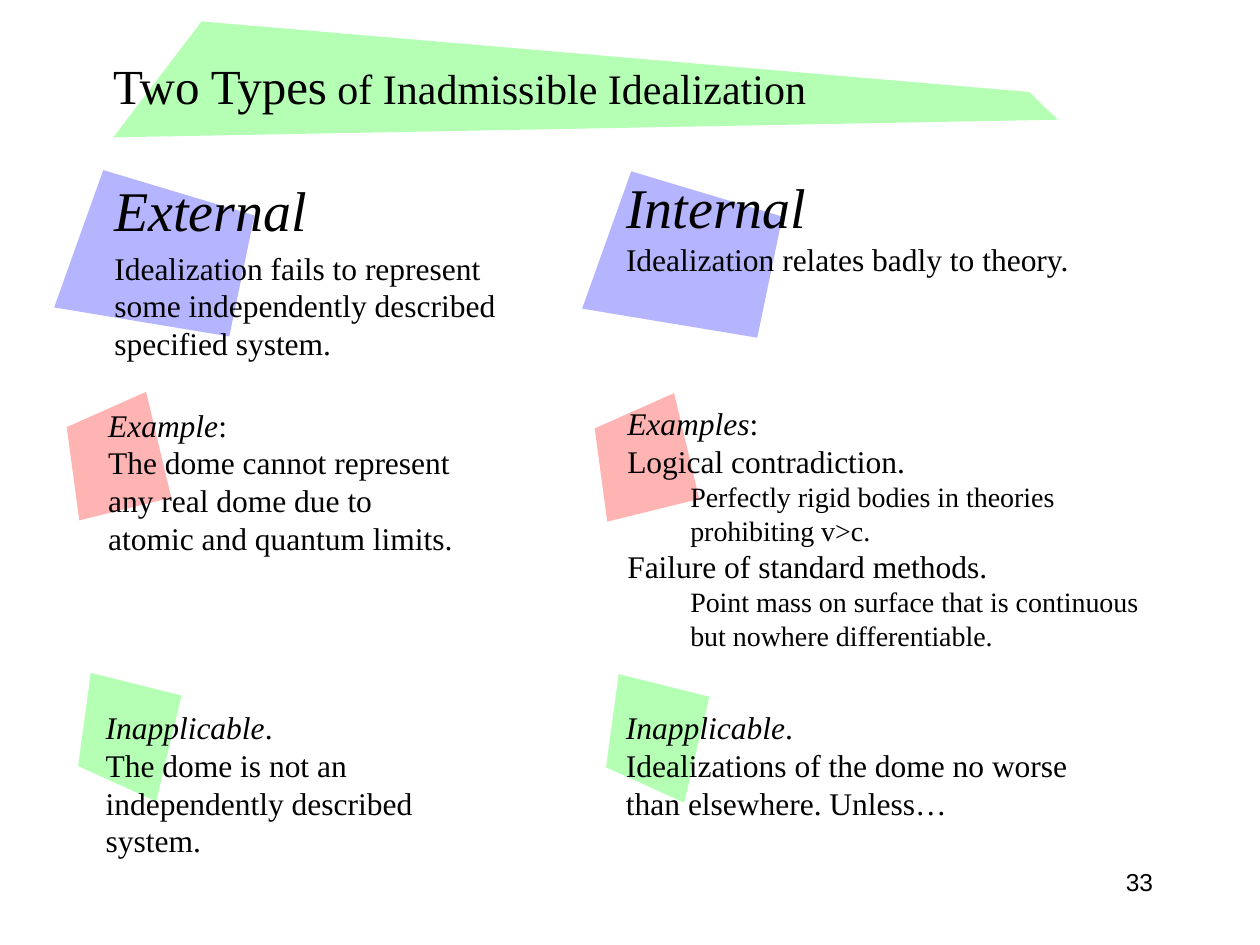
"""Build the slide comparing external and internal inadmissible idealization."""
from pptx import Presentation
from pptx.dml.color import RGBColor
from pptx.enum.text import MSO_ANCHOR, PP_ALIGN
from pptx.util import Inches, Pt

LEFT, RIGHT = PP_ALIGN.LEFT, PP_ALIGN.RIGHT
TOP, MIDDLE = MSO_ANCHOR.TOP, MSO_ANCHOR.MIDDLE
SERIF, SANS = "Times New Roman", "Arial"
BLACK, BLUE, RED, GREEN = "000000", "B4B4FF", "FFB4B4", "B4FFB4"
COLUMN_SHIFTS = [(0, 0), (4.19, 0.01)]

BANNER = [(1.6, 0.17), (8.17, 0.73), (8.28, 0.84), (8.4, 0.95), (0.9, 1.09)]
PATCHES = [
    (BLUE, [(0.82, 1.35), (2.02, 1.71), (1.82, 2.67), (0.43, 2.44)]),
    (RED, [(1.16, 3.11), (0.53, 3.39), (0.63, 4.13), (1.36, 3.95)]),
    (GREEN, [(1.24, 6.36), (0.62, 6.08), (0.72, 5.34), (1.44, 5.52)]),
]

TITLE = [[("Two Types", 28, False), (" of Inadmissible Idealization", 24, False)]]
EXTERNAL = [
    [("External", 32, True)],
    [("Idealization fails to represent some independently described specified system.", 18, False)],
]
INTERNAL = [
    [("Internal", 32, True)],
    [("Idealization relates badly to theory.", 18, False)],
]
DOME_EXAMPLE = [
    [("Example", 18, True), (":", 18, False)],
    [("The dome cannot represent any real dome due to atomic and quantum limits.", 18, False)],
]
THEORY_EXAMPLES = [
    [("Examples", 18, True), (":", 18, False)],
    [("Logical contradiction.\n", 18, False),
     ("Perfectly rigid bodies in theories prohibiting v>c.", 16, False)],
    [("Failure of standard methods.\n", 18, False),
     ("Point mass on surface that is continuous but nowhere differentiable.", 16, False)],
]
DOME_VERDICT = [
    [("Inapplicable", 18, True), (".", 18, False)],
    [("The dome is not an independently described system.", 18, False)],
]
THEORY_VERDICT = [
    [("Inapplicable", 18, True), (".", 18, False)],
    [("Idealizations of the dome no worse than elsewhere. Unless…", 18, False)],
]
TEXTS = [
    ((0.8, 0.21, 7.75, 0.92), TITLE, {"anchor": MIDDLE}),
    ((0.81, 1.34, 3.26, 1.82), EXTERNAL, {"space": 0.2}),
    ((4.87, 1.32, 3.99, 0.94), INTERNAL, {}),
    ((0.76, 3.17, 2.99, 1.3), DOME_EXAMPLE, {}),
    ((4.88, 3.16, 4.29, 2.07), THEORY_EXAMPLES, {"hanging": 0.5}),
    ((0.74, 5.57, 2.82, 1.3), DOME_VERDICT, {}),
    ((4.87, 5.57, 4.13, 1), THEORY_VERDICT, {}),
    ((7.17, 6.83, 2.08, 0.5), [[("33", 14, False)]], {"align": RIGHT, "font": SANS}),
]


def rgb(value):
    return RGBColor.from_string(value)


def add_patch(s, points, color, dx=0, dy=0):
    moved = [(Inches(x + dx), Inches(y + dy)) for x, y in points]
    builder = s.shapes.build_freeform(*moved[0])
    builder.add_line_segments(moved[1:], close=True)
    sp = builder.convert_to_shape()
    sp.shadow.inherit = False
    sp.fill.solid()
    sp.fill.fore_color.rgb = rgb(color)
    sp.line.fill.background()


def add_text(s, box, paragraphs, anchor=TOP, align=LEFT, font=SERIF, space=0, hanging=0):
    tf = s.shapes.add_textbox(*map(Inches, box)).text_frame
    tf.word_wrap = True
    tf.vertical_anchor = anchor
    for i, runs in enumerate(paragraphs):
        p = tf.add_paragraph() if i else tf.paragraphs[0]
        p.alignment = align
        if space:
            p.space_before = Pt(space * runs[0][1])
        if hanging:
            pPr = p._p.get_or_add_pPr()
            pPr.set("marL", str(Inches(hanging)))
            pPr.set("indent", str(-Inches(hanging)))
        for text, size, italic in runs:
            r = p.add_run()
            r.text = text.rstrip("\n")
            r.font.name = font
            r.font.size = Pt(size)
            r.font.italic = italic
            r.font.color.rgb = rgb(BLACK)
            if text.endswith("\n"):
                p.add_line_break()


def main():
    prs = Presentation()
    prs.slide_width, prs.slide_height = Inches(10), Inches(7.5)
    s = prs.slides.add_slide(prs.slide_layouts[6])
    add_patch(s, BANNER, GREEN)
    for color, points in PATCHES:
        for dx, dy in COLUMN_SHIFTS:
            add_patch(s, points, color, dx, dy)
    for box, paragraphs, options in TEXTS:
        add_text(s, box, paragraphs, **options)
    prs.save("out.pptx")


if __name__ == "__main__":
    main()
